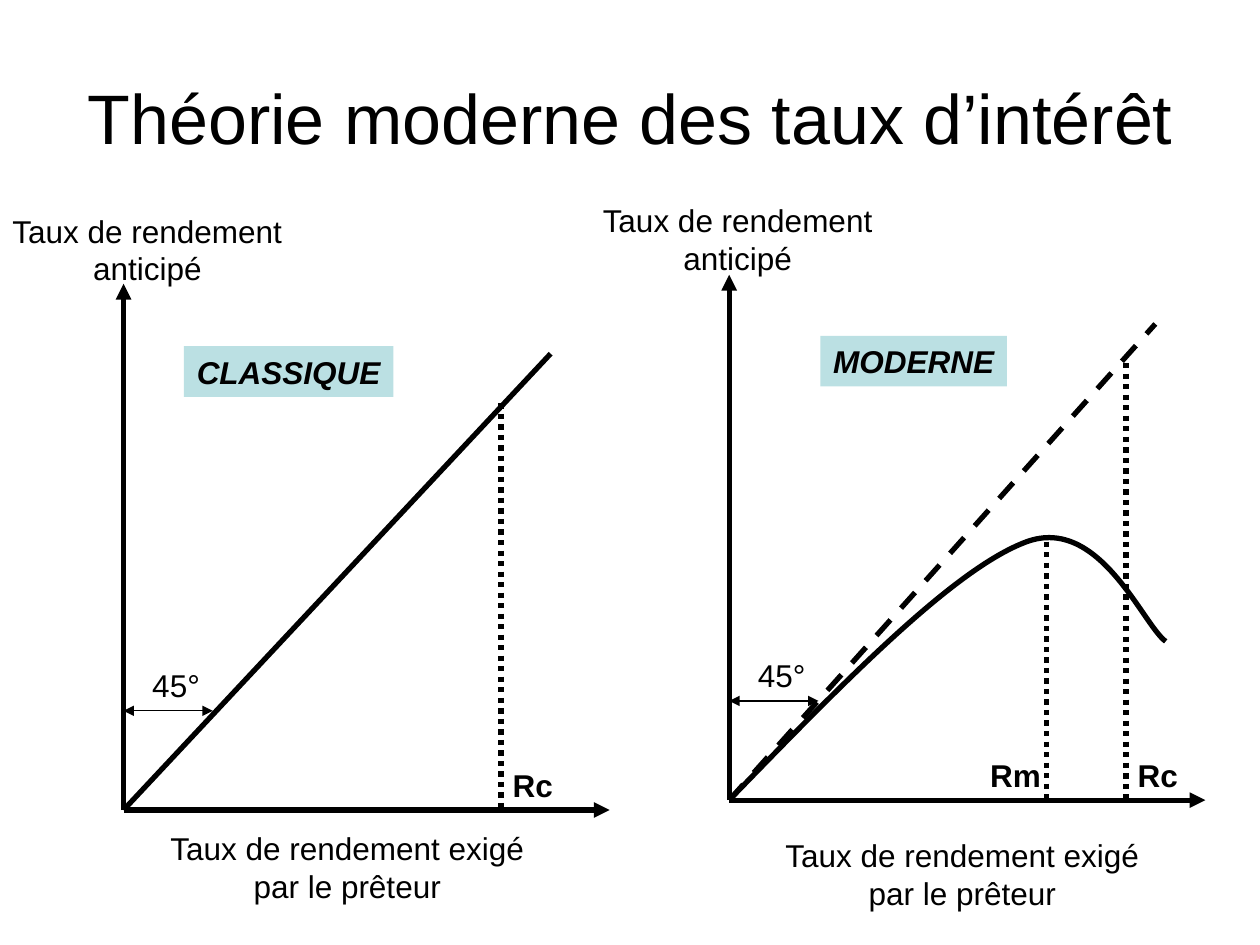
from lxml import etree
from pptx import Presentation
from pptx.dml.color import RGBColor
from pptx.enum.dml import MSO_LINE
from pptx.enum.shapes import MSO_CONNECTOR, MSO_SHAPE
from pptx.enum.text import MSO_ANCHOR, MSO_AUTO_SIZE, PP_ALIGN
from pptx.oxml.ns import qn
from pptx.util import Cm, Pt

STRAIGHT = MSO_CONNECTOR.STRAIGHT
RECTANGLE = MSO_SHAPE.RECTANGLE
DASH, DOTS = MSO_LINE.DASH, MSO_LINE.ROUND_DOT
CENTER = PP_ALIGN.CENTER
MIDDLE = MSO_ANCHOR.MIDDLE
FIT_SHAPE = MSO_AUTO_SIZE.SHAPE_TO_FIT_TEXT

FONT = "Arial"
COLORS = {"ink": "000000", "label": "BBE0E3"}
LABEL_HEIGHT = 1.02

# Lengths in cm; verticals hold a label, its x and width, then the line's x and top
PANELS = [
    {
        "name": ("CLASSIQUE", 3.71, 6.98, 4.22),
        "origin": (2.49, 16.33), "top": 5.72, "right": 12.29,
        "diagonal_end": (11.10, 7.13), "diagonal_dash": None,
        "verticals": [("Rc", 10.06, 1.36, 10.10, 8.13)],
        "x_title": (3.15, 16.59), "y_title": (-0.04, 4.14),
    },
    {
        "name": ("MODERNE", 16.54, 6.77, 3.76),
        "origin": (14.70, 16.13), "top": 5.54, "right": 24.30,
        "diagonal_end": (23.29, 6.53), "diagonal_dash": DASH,
        "verticals": [("Rc", 22.66, 1.36, 22.70, 7.32),
                      ("Rm", 19.66, 1.62, 21.10, 10.92)],
        "x_title": (15.55, 16.73), "y_title": (11.86, 3.93),
    },
]
# Start point, then two control points and an end point for each segment
RETURN_CURVE = [(14.70, 16.13),
                (16.97, 13.79), (19.23, 11.46), (20.70, 10.92),
                (22.17, 10.39), (23.04, 12.60), (23.50, 12.93)]


def color(name):
    return RGBColor.from_string(COLORS[name])


def format_paragraph(para, size, bold=False, italic=False):
    para.alignment = CENTER
    para.font.name = FONT
    para.font.size = Pt(size)
    para.font.bold = bold
    para.font.italic = italic
    para.font.color.rgb = color("ink")


def fill_text(box, text, bold=False, italic=False):
    frame = box.text_frame
    frame.word_wrap = False
    frame.auto_size = FIT_SHAPE
    frame.text = text
    for para in frame.paragraphs:
        format_paragraph(para, 18, bold, italic)


def add_text(slide, text, left, top, width, height=LABEL_HEIGHT, bold=False):
    box = slide.shapes.add_textbox(Cm(left), Cm(top), Cm(width), Cm(height))
    fill_text(box, text, bold)


def add_name(slide, text, left, top, width):
    box = slide.shapes.add_shape(RECTANGLE, Cm(left), Cm(top), Cm(width), Cm(LABEL_HEIGHT))
    box.shadow.inherit = False
    box.fill.solid()
    box.fill.fore_color.rgb = color("label")
    box.line.fill.background()
    fill_text(box, text, bold=True, italic=True)


def add_line(slide, start, end, width=3, dash=None, arrows=()):
    """Draw a straight line; arrows lists headEnd (start) and tailEnd (end)."""
    line = slide.shapes.add_connector(STRAIGHT, *map(Cm, start + end))
    line.line.color.rgb = color("ink")
    line.line.width = Pt(width)
    if dash is not None:
        line.line.dash_style = dash
    properties = line._element.spPr
    outline = properties.find(qn("a:ln"))
    for arrow in arrows:
        etree.SubElement(outline, qn(f"a:{arrow}"), type="triangle")
    etree.SubElement(properties, qn("a:effectLst"))


def add_curve(slide, points):
    """Draw a Bézier curve by grouping each three line segments into one."""
    start, *rest = [(Cm(x), Cm(y)) for x, y in points]
    builder = slide.shapes.build_freeform(*start)
    builder.add_line_segments(rest, close=False)
    curve = builder.convert_to_shape()
    segments = list(curve._element.iter(qn("a:lnTo")))
    outline = segments[0].getparent()
    for first in range(0, len(segments), 3):
        bezier = etree.SubElement(outline, qn("a:cubicBezTo"))
        for segment in segments[first:first + 3]:
            bezier.append(segment[0])
            outline.remove(segment)
    curve.shadow.inherit = False
    curve.fill.background()
    curve.line.color.rgb = color("ink")
    curve.line.width = Pt(3)


def add_panel(slide, panel):
    origin = panel["origin"]
    x, y = origin
    add_line(slide, origin, (x, panel["top"]), arrows=["tailEnd"])
    add_line(slide, origin, (panel["right"], y), arrows=["tailEnd"])
    add_line(slide, origin, panel["diagonal_end"], dash=panel["diagonal_dash"])
    add_line(slide, (x, y - 2), (x + 1.8, y - 2), width=0.75,
             arrows=["headEnd", "tailEnd"])
    add_text(slide, "45°", x + 0.3, y - 3.02, 1.52)
    for label, left, width, line_x, line_top in panel["verticals"]:
        add_line(slide, (line_x, line_top), (line_x, y), dash=DOTS)
        add_text(slide, label, left, y - 1.02, width, bold=True)
    add_text(slide, "Taux de rendement exigé\npar le prêteur", *panel["x_title"], 7.7, 1.78)
    add_text(slide, "Taux de rendement\nanticipé", *panel["y_title"], 6.02, 1.78)
    add_name(slide, *panel["name"])


def set_title(slide, text):
    title = slide.shapes.title
    title.left, title.top = Cm(1.27), Cm(0.76)
    title.width, title.height = Cm(22.86), Cm(3.18)
    title.text_frame.text = text
    title.text_frame.vertical_anchor = MIDDLE
    format_paragraph(title.text_frame.paragraphs[0], 40)


def main():
    deck = Presentation()
    deck.slide_width, deck.slide_height = Cm(25.4), Cm(19.05)
    slide = deck.slides.add_slide(deck.slide_layouts[5])
    set_title(slide, "Théorie moderne des taux d’intérêt")
    for panel in PANELS:
        add_panel(slide, panel)
    add_curve(slide, RETURN_CURVE)
    deck.save("out.pptx")


if __name__ == "__main__":
    main()
